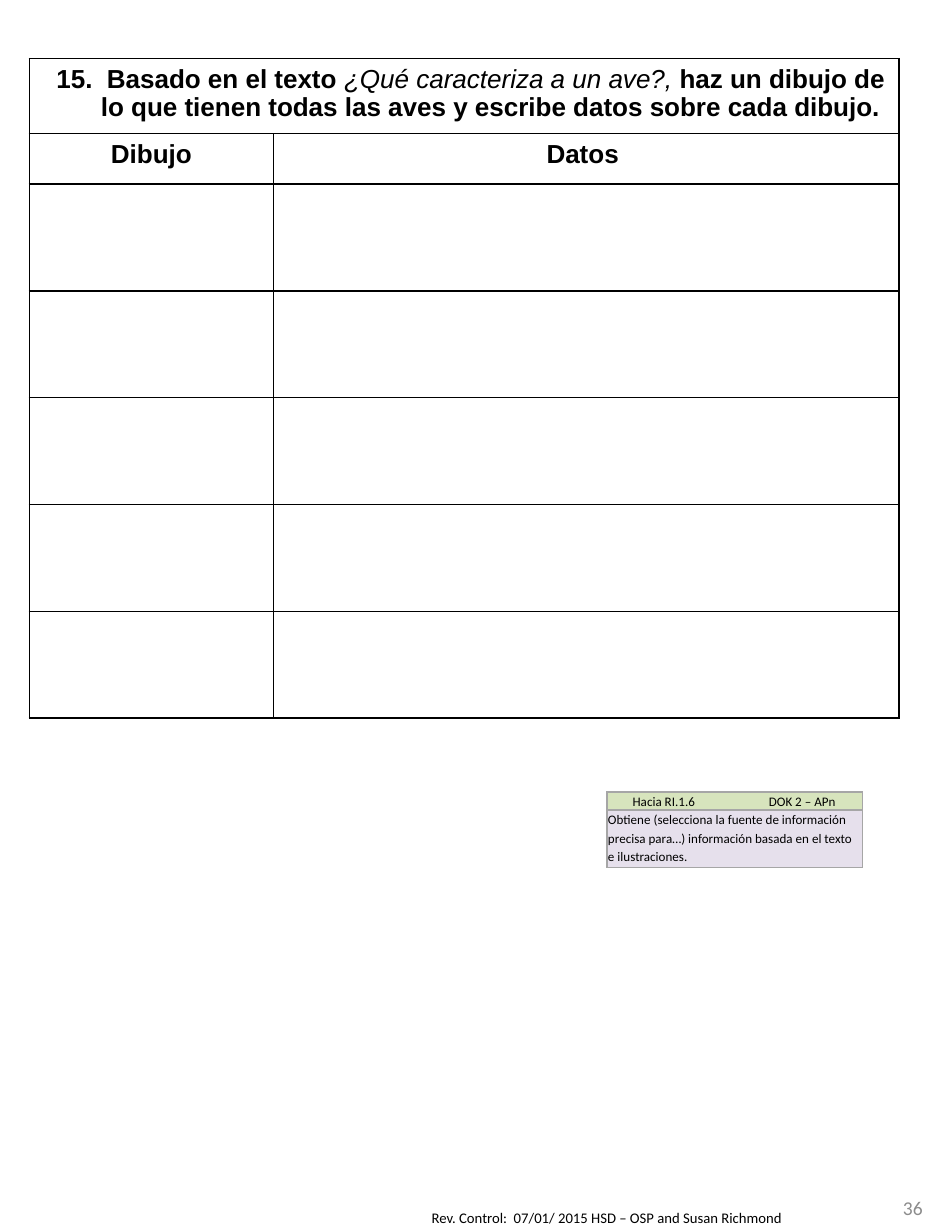
from dataclasses import dataclass

from lxml import etree
from pptx import Presentation
from pptx.dml.color import RGBColor
from pptx.enum.text import MSO_ANCHOR, PP_ALIGN
from pptx.oxml.ns import qn
from pptx.util import Inches, Pt

CENTER, RIGHT, LEFT = PP_ALIGN.CENTER, PP_ALIGN.RIGHT, PP_ALIGN.LEFT
MIDDLE = MSO_ANCHOR.MIDDLE


@dataclass(frozen=True)
class Theme:
    heading_font: str = "Arial"
    body_font: str = "Calibri"
    ink: str = "000000"
    page_grey: str = "8C8C8C"
    standard_border: str = "A6A6A6"
    standard_head: str = "D7E4BD"
    standard_body: str = "E6E0EC"
    heading_size: int = 16
    page_size: int = 12
    footer_size: int = 9
    standard_size: int = 8


theme = Theme()


def add_run(paragraph, text, font, size, color, bold=False, italic=False):
    run = paragraph.add_run()
    run.text = text
    run.font.name, run.font.size = font, Pt(size)
    run.font.bold, run.font.italic = bold, italic
    run.font.color.rgb = RGBColor.from_string(color)


def add_grid(left, top, widths, heights, border):
    """Add an unstyled table with a 1 pt border round every cell."""
    grid = slide.shapes.add_table(
        len(heights), len(widths), Inches(left), Inches(top),
        Inches(sum(widths)), Inches(sum(heights))).table
    grid.first_row = grid.horz_banding = False
    for column, width in zip(grid.columns, widths):
        column.width = Inches(width)
    for row, height in zip(grid.rows, heights):
        row.height = Inches(height)
    for cell in grid.iter_cells():
        properties = cell._tc.get_or_add_tcPr()
        for side in ("a:lnL", "a:lnR", "a:lnT", "a:lnB"):
            line = etree.SubElement(properties, qn(side), w=str(Pt(1)))
            solid = etree.SubElement(line, qn("a:solidFill"))
            etree.SubElement(solid, qn("a:srgbClr"), val=border)
        cell.fill.background()
    return grid


prs = Presentation()
prs.slide_width, prs.slide_height = Inches(8), Inches(10.5)
slide = prs.slides.add_slide(prs.slide_layouts[6])

# Footer and page number
footer = slide.shapes.add_textbox(
    Inches(3.58), Inches(10.25), Inches(4), Inches(0.25)).text_frame
footer.word_wrap = True
add_run(footer.paragraphs[0],
        "Rev. Control:  07/01/ 2015 HSD – OSP and Susan Richmond",
        theme.body_font, theme.footer_size, theme.ink)

page_number = slide.shapes.add_textbox(
    Inches(7.09), Inches(10.08), Inches(0.87), Inches(0.42)).text_frame
page_number.word_wrap = True
page_number.vertical_anchor = MIDDLE
page_number.paragraphs[0].alignment = RIGHT
add_run(page_number.paragraphs[0], "36",
        theme.body_font, theme.page_size, theme.page_grey)

# Answer table: question, column headings, five empty rows
answers = add_grid(0.25, 0.5, [2.08, 5.33], [0.64, 0.43] + [0.91] * 5, theme.ink)
answers.cell(0, 0).merge(answers.cell(0, 1))
question = answers.cell(0, 0).text_frame.paragraphs[0]
hanging = question._p.get_or_add_pPr()
hanging.set("marL", str(Inches(0.51)))
hanging.set("indent", str(Inches(-0.38)))
for text, is_title in [
    ("15.  Basado en el texto ", False),
    ("¿Qué caracteriza a un ave?, ", True),
    ("haz un dibujo de lo que tienen todas las aves y escribe datos "
     "sobre cada dibujo.", False),
]:
    add_run(question, text, theme.heading_font, theme.heading_size, theme.ink,
            bold=not is_title, italic=is_title)

for column, heading in enumerate(["Dibujo", "Datos "]):
    paragraph = answers.cell(1, column).text_frame.paragraphs[0]
    paragraph.alignment = CENTER
    add_run(paragraph, heading, theme.heading_font, theme.heading_size,
            theme.ink, bold=True)

# Standard box: codes above, description below
standard = add_grid(5.17, 6.75, [2.18], [0.15, 0.49], theme.standard_border)
for row, (text, fill) in enumerate([
    ("\tHacia RI.1.6\tDOK 2 – APn", theme.standard_head),
    ("Obtiene (selecciona la fuente de información precisa para…) "
     "información basada en el texto e ilustraciones.", theme.standard_body),
]):
    cell = standard.cell(row, 0)
    cell.fill.solid()
    cell.fill.fore_color.rgb = RGBColor.from_string(fill)
    cell.margin_left = cell.margin_right = Inches(0.01)
    cell.margin_top = cell.margin_bottom = 0
    paragraph = cell.text_frame.paragraphs[0]
    paragraph.alignment = LEFT
    paragraph.line_spacing = 1.15
    add_run(paragraph, text, theme.body_font, theme.standard_size, theme.ink)

# Tab stops set the two codes apart
codes = standard.cell(0, 0)
codes.vertical_anchor = MIDDLE
tab_stops = etree.SubElement(
    codes.text_frame.paragraphs[0]._p.get_or_add_pPr(), qn("a:tabLst"))
for position in (0.21, 1.37):
    etree.SubElement(tab_stops, qn("a:tab"), pos=str(Inches(position)), algn="l")

prs.save("out.pptx")
